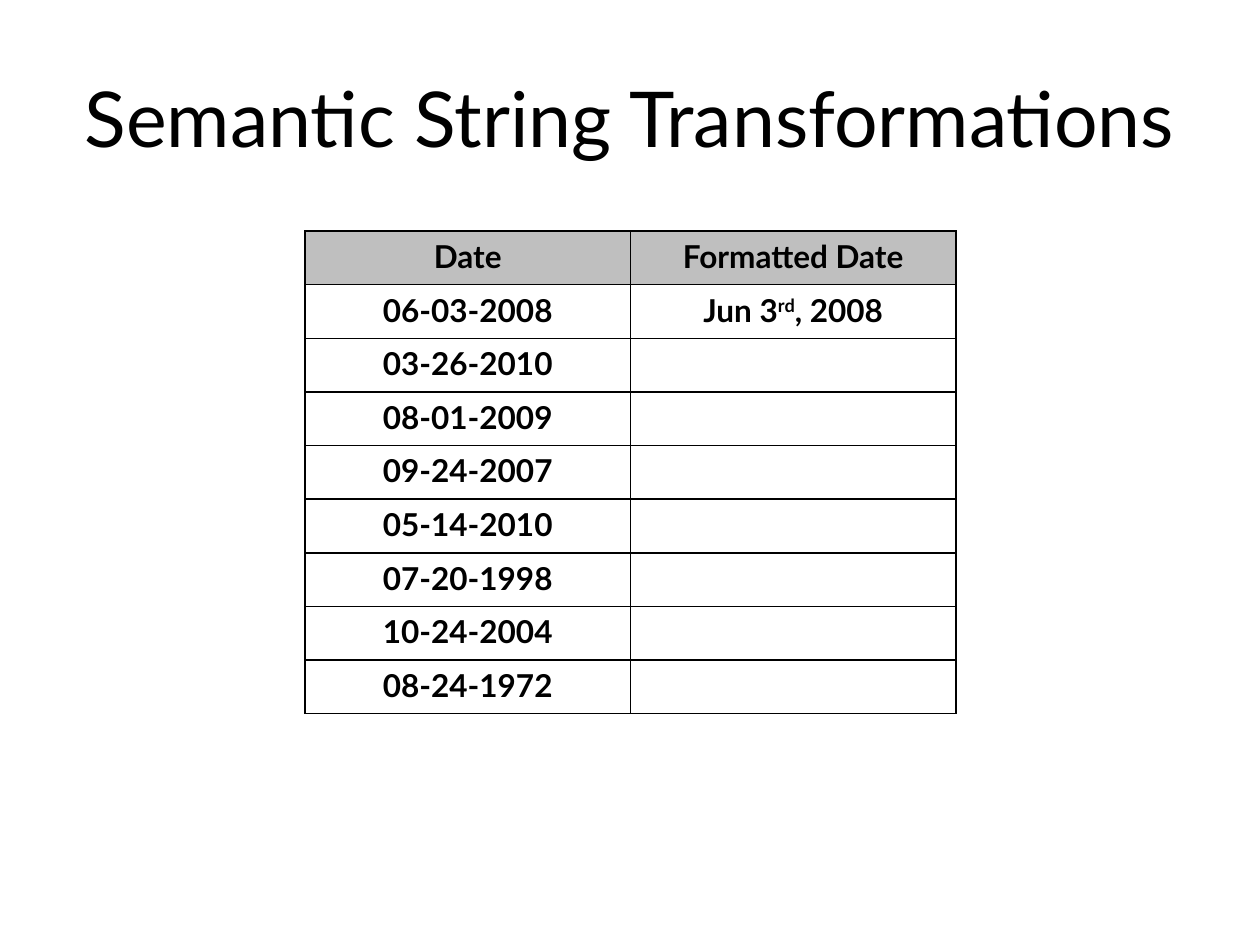
from lxml import etree
from pptx import Presentation
from pptx.dml.color import RGBColor
from pptx.enum.text import MSO_ANCHOR, PP_ALIGN
from pptx.oxml.ns import qn
from pptx.util import Pt

PX = 914400 / 126
CENTER = PP_ALIGN.CENTER
MIDDLE = MSO_ANCHOR.MIDDLE
FONT = "Lato"
BLACK = "000000"
HEADER_FILL = "BFBFBF"

HEADERS = ["Date", "Formatted Date"]
DATES = ["06-03-2008", "03-26-2010", "08-01-2009", "09-24-2007",
         "05-14-2010", "07-20-1998", "10-24-2004", "08-24-1972"]
FORMATTED_DATE = [("Jun 3", 0), ("rd", 30), (", 2008", 0)]


def px(n):
    return round(n * PX)


def color(value):
    return RGBColor.from_string(value)


def add_runs(p, runs, size, bold=False):
    """Add centred (text, superscript percent) runs to a paragraph."""
    p.alignment = CENTER
    for text, raised in runs:
        r = p.add_run()
        r.text = text
        r.font.name = FONT
        r.font.size = Pt(size)
        r.font.bold = bold
        r.font.color.rgb = color(BLACK)
        if raised:
            r.font._element.set("baseline", str(raised * 1000))


def set_borders(cell):
    tc_pr = cell._tc.get_or_add_tcPr()
    for i, side in enumerate(("a:lnL", "a:lnR", "a:lnT", "a:lnB")):
        ln = etree.Element(qn(side), w=str(Pt(1)))
        fill = etree.SubElement(ln, qn("a:solidFill"))
        etree.SubElement(fill, qn("a:srgbClr"), val=BLACK)
        tc_pr.insert(i, ln)


def add_title(slide, x, y, w, h):
    tf = slide.shapes.add_textbox(px(x), px(y), px(w), px(h)).text_frame
    tf.word_wrap = True
    tf.vertical_anchor = MIDDLE
    add_runs(tf.paragraphs[0], [("Semantic String Transformations", 0)], 44)


def add_date_table(slide, x, y, w, h):
    rows = [[[(header, 0)] for header in HEADERS]]
    rows += [[[(date, 0)], []] for date in DATES]
    rows[1][1] = FORMATTED_DATE
    table = slide.shapes.add_table(len(rows), len(HEADERS),
                                   px(x), px(y), px(w), px(h)).table
    table.horz_banding = False
    for i, row in enumerate(rows):
        for j, runs in enumerate(row):
            cell = table.cell(i, j)
            if i == 0:
                cell.fill.solid()
                cell.fill.fore_color.rgb = color(HEADER_FILL)
            else:
                cell.fill.background()
            set_borders(cell)
            p = cell.text_frame.paragraphs[0]
            p.font.size = Pt(18)
            add_runs(p, runs, 18, bold=True)


def main():
    prs = Presentation()
    prs.slide_width, prs.slide_height = px(1260), px(945)
    slide = prs.slides.add_slide(prs.slide_layouts[6])
    add_title(slide, 63, 38, 1134, 157)
    add_date_table(slide, 305, 231, 651, 483)
    prs.save("out.pptx")


if __name__ == "__main__":
    main()
